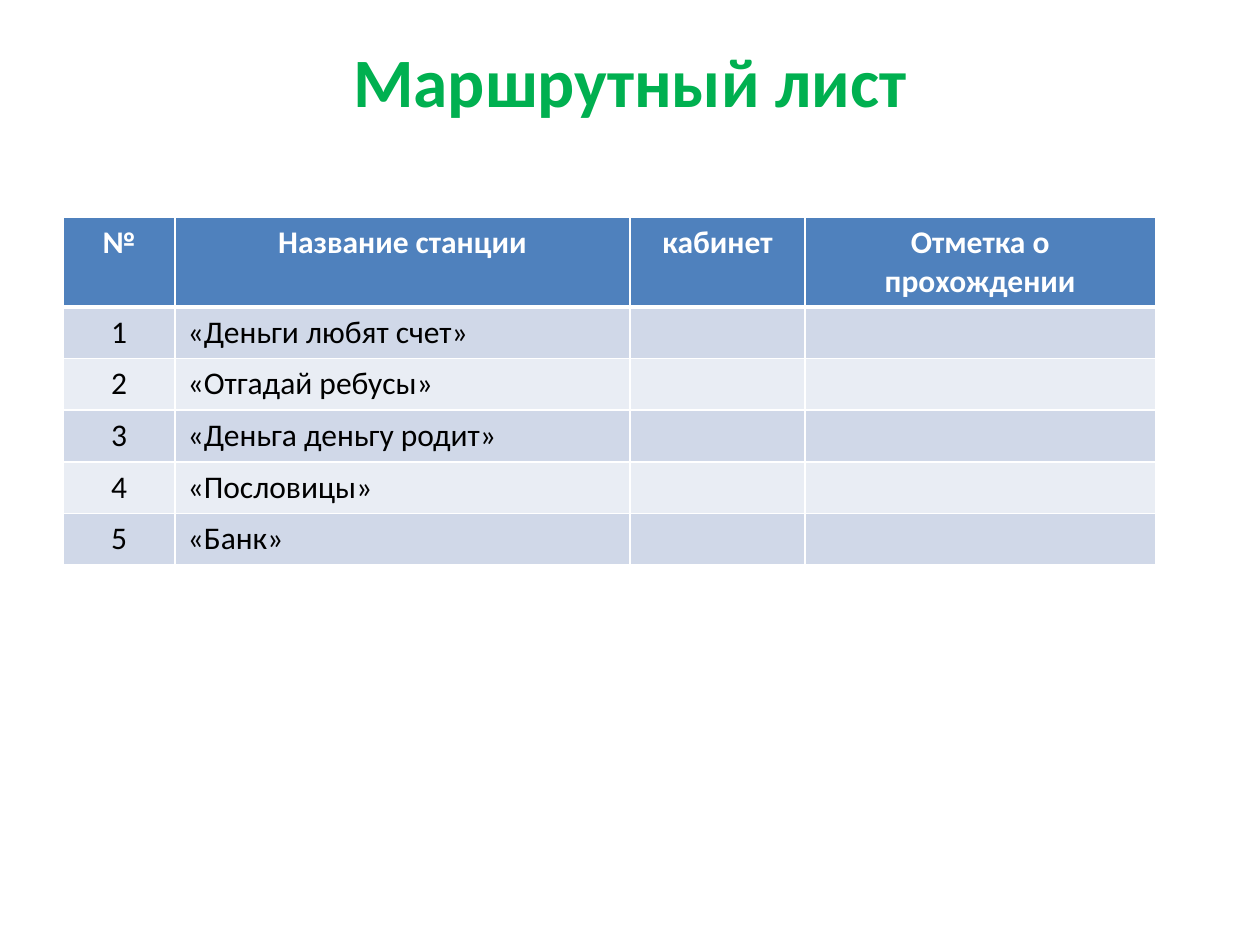
from lxml.etree import SubElement
from pptx import Presentation
from pptx.dml.color import RGBColor
from pptx.enum.text import MSO_ANCHOR, MSO_AUTO_SIZE, PP_ALIGN
from pptx.oxml.ns import qn
from pptx.util import Inches, Pt

GREEN = RGBColor(0x00, 0xB0, 0x50)
BLUE = RGBColor(0x4F, 0x81, 0xBD)
BANDS = RGBColor(0xD0, 0xD8, 0xE8), RGBColor(0xE9, 0xED, 0xF4)
WHITE = RGBColor(0xFF, 0xFF, 0xFF)
BLACK = RGBColor(0x00, 0x00, 0x00)

HEADER = ["№", "Название станции", "кабинет", "Отметка о прохождении"]
STATIONS = ["«Деньги любят счет»", "«Отгадай ребусы»", "«Деньга деньгу родит»",
            "«Пословицы»", "«Банк»"]
COL_WIDTHS = [0.89, 3.61, 1.39, 2.78]
ROW_HEIGHT = 0.41


class RouteSheet:
    """Holds the style and the current slide, and adds its title and table."""

    font = "Calibri"

    def __init__(self, prs):
        self.s = prs.slides.add_slide(prs.slide_layouts[5])
        self.width, self.height = prs.slide_width, prs.slide_height

    def box(self, x, y, w, h):
        return (round(x * self.width), round(y * self.height),
                round(w * self.width), round(h * self.height))

    def text(self, p, text, size, color, bold, align):
        p.alignment = align
        r = p.add_run()
        r.text = text
        for name, value in {"name": self.font, "size": Pt(size), "bold": bold}.items():
            setattr(r.font, name, value)
        r.font.color.rgb = color

    def title(self, text, *share):
        sp = self.s.shapes.title
        sp.left, sp.top, sp.width, sp.height = self.box(*share)
        tf = sp.text_frame
        fmt = {"word_wrap": True, "auto_size": MSO_AUTO_SIZE.NONE,
               "vertical_anchor": MSO_ANCHOR.TOP, "margin_top": 0}
        for name, value in fmt.items():
            setattr(tf, name, value)
        self.text(tf.paragraphs[0], text, 39.6, GREEN, True, PP_ALIGN.CENTER)

    def borders(self, cell, **widths):
        tc_pr = cell._tc.get_or_add_tcPr()
        for side in "LRTB":
            ln = SubElement(tc_pr, qn(f"a:ln{side}"), w=str(Pt(widths.get(side, 1))))
            fill = SubElement(ln, qn("a:solidFill"))
            SubElement(fill, qn("a:srgbClr"), val=str(WHITE))

    def table(self, rows, col_widths, row_height, *share):
        tbl = self.s.shapes.add_table(len(rows), len(col_widths), *self.box(*share)).table
        for col, width in zip(tbl.columns, col_widths):
            col.width = Inches(width)
        for i, values in enumerate(rows):
            tbl.rows[i].height = Inches(row_height)
            head = i == 0
            for j, text in enumerate(values):
                cell = tbl.cell(i, j)
                self.borders(cell, T=3 if i == 1 else 1, B=3 if head else 1)
                cell.fill.solid()
                cell.fill.fore_color.rgb = BLUE if head else BANDS[(i - 1) % 2]
                if text:
                    align = PP_ALIGN.CENTER if head or j == 0 else PP_ALIGN.LEFT
                    self.text(cell.text_frame.paragraphs[0], text, 18,
                              WHITE if head else BLACK, head, align)


def main():
    prs = Presentation()
    prs.slide_width, prs.slide_height = Inches(10), Inches(7.5)
    sheet = RouteSheet(prs)
    sheet.title("Маршрутный лист", 0.05, 0.04, 0.9, 0.17)
    rows = [HEADER] + [[str(n), name, "", ""] for n, name in enumerate(STATIONS, 1)]
    sheet.table(rows, COL_WIDTHS, ROW_HEIGHT, 0.05, 0.23, 0.87, 0.36)
    prs.save("out.pptx")


if __name__ == "__main__":
    main()
